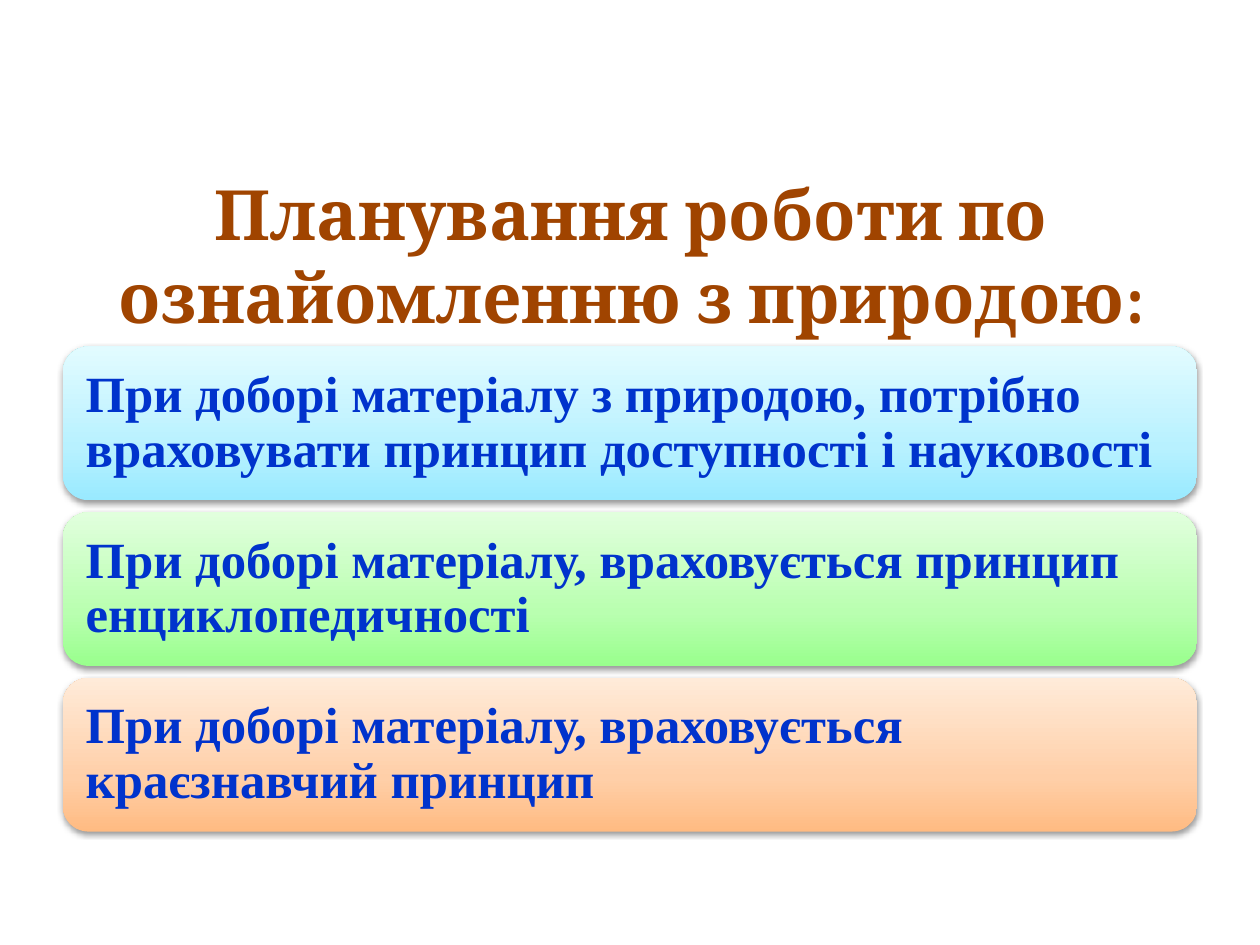
from copy import deepcopy

from lxml import etree
from pptx import Presentation
from pptx.dml.color import RGBColor
from pptx.enum.shapes import MSO_SHAPE
from pptx.enum.text import MSO_ANCHOR, MSO_AUTO_SIZE, PP_ALIGN
from pptx.oxml.ns import qn
from pptx.util import Inches, Pt

TITLE_BROWN = RGBColor(0xA0, 0x44, 0x00)
TEXT_BLUE = RGBColor(0x00, 0x33, 0xCC)
# Gradient colours run from the bottom of a card to its top
CYAN = [RGBColor.from_string(c) for c in ("99EAFF", "B8F1FF", "E2FBFF")]
GREEN = [RGBColor.from_string(c) for c in ("99FF8D", "B9FFB0", "E1FFDD")]
ORANGE = [RGBColor.from_string(c) for c in ("FFBB82", "FFCFA8", "FFEBD9")]
STOP_POSITIONS = (0, 0.35, 1)

HEADING = "Планування роботи по ознайомленню з природою:"
PRINCIPLES = [
    ("При доборі матеріалу з природою, потрібно враховувати "
     "принцип доступності і науковості", CYAN),
    ("При доборі матеріалу, враховується принцип енциклопедичності", GREEN),
    ("При доборі матеріалу, враховується краєзнавчий принцип", ORANGE),
]


def add_run(paragraph, text, font_name, size, color):
    run = paragraph.add_run()
    run.text = text
    run.font.name = font_name
    run.font.size = Pt(size)
    run.font.bold = True
    run.font.color.rgb = color


def fill_gradient(card, colors):
    card.fill.gradient()
    card.fill.gradient_angle = 90
    # The default gradient has two stops; add the third
    stops = card._element.spPr.find(qn("a:gradFill")).find(qn("a:gsLst"))
    stops.append(deepcopy(stops[-1]))
    for stop, position, color in zip(card.fill.gradient_stops, STOP_POSITIONS, colors):
        stop.position = position
        stop.color.rgb = color


def add_soft_shadow(card):
    card.shadow.inherit = False
    effects = card._element.spPr.find(qn("a:effectLst"))
    shadow = etree.SubElement(effects, qn("a:outerShdw"), blurRad=str(Pt(3.1)),
                              dist=str(Pt(1.6)), dir="5400000", rotWithShape="0")
    black = etree.SubElement(shadow, qn("a:srgbClr"), val="000000")
    etree.SubElement(black, qn("a:alpha"), val="38000")


def place_title(slide, left, top, width, height):
    title = slide.shapes.title
    title.left, title.top, title.width, title.height = left, top, width, height
    frame = title.text_frame
    frame.auto_size = MSO_AUTO_SIZE.NONE
    frame.vertical_anchor = MSO_ANCHOR.MIDDLE
    paragraph = frame.paragraphs[0]
    paragraph.alignment = PP_ALIGN.CENTER
    add_run(paragraph, HEADING, "Cambria", 39.6, TITLE_BROWN)


def add_principle(shapes, text, colors, left, top, width, height):
    # Card
    card = shapes.add_shape(MSO_SHAPE.ROUNDED_RECTANGLE, left, top, width, height)
    card.adjustments[0] = 0.167
    fill_gradient(card, colors)
    card.line.fill.background()
    add_soft_shadow(card)

    # Wording, held inside the rounded corners
    inset = Inches(0.06)
    wording = shapes.add_textbox(left + inset, top + inset,
                                 width - 2 * inset, height - 2 * inset)
    frame = wording.text_frame
    frame.word_wrap = True
    frame.vertical_anchor = MSO_ANCHOR.MIDDLE
    frame.margin_left = frame.margin_right = Inches(0.12)
    frame.margin_top = frame.margin_bottom = Inches(0.12)
    paragraph = frame.paragraphs[0]
    paragraph.line_spacing = 0.9
    add_run(paragraph, text, "Times New Roman", 29, TEXT_BLUE)


def place_principles(slide, left, top, width, height):
    group = slide.shapes.add_group_shape()
    card_height = Inches(1.22)
    pitch = (height - card_height) // (len(PRINCIPLES) - 1)
    for row, (text, colors) in enumerate(PRINCIPLES):
        add_principle(group.shapes, text, colors,
                      left, top + row * pitch, width, card_height)


def main():
    presentation = Presentation()
    presentation.slide_width = Inches(10)
    presentation.slide_height = Inches(7.5)
    slide = presentation.slides.add_slide(presentation.slide_layouts[5])
    place_title(slide, Inches(0.51), Inches(1.31), Inches(9), Inches(1.42))
    place_principles(slide, Inches(0.5), Inches(2.75), Inches(9), Inches(3.85))
    presentation.save("out.pptx")


if __name__ == "__main__":
    main()
